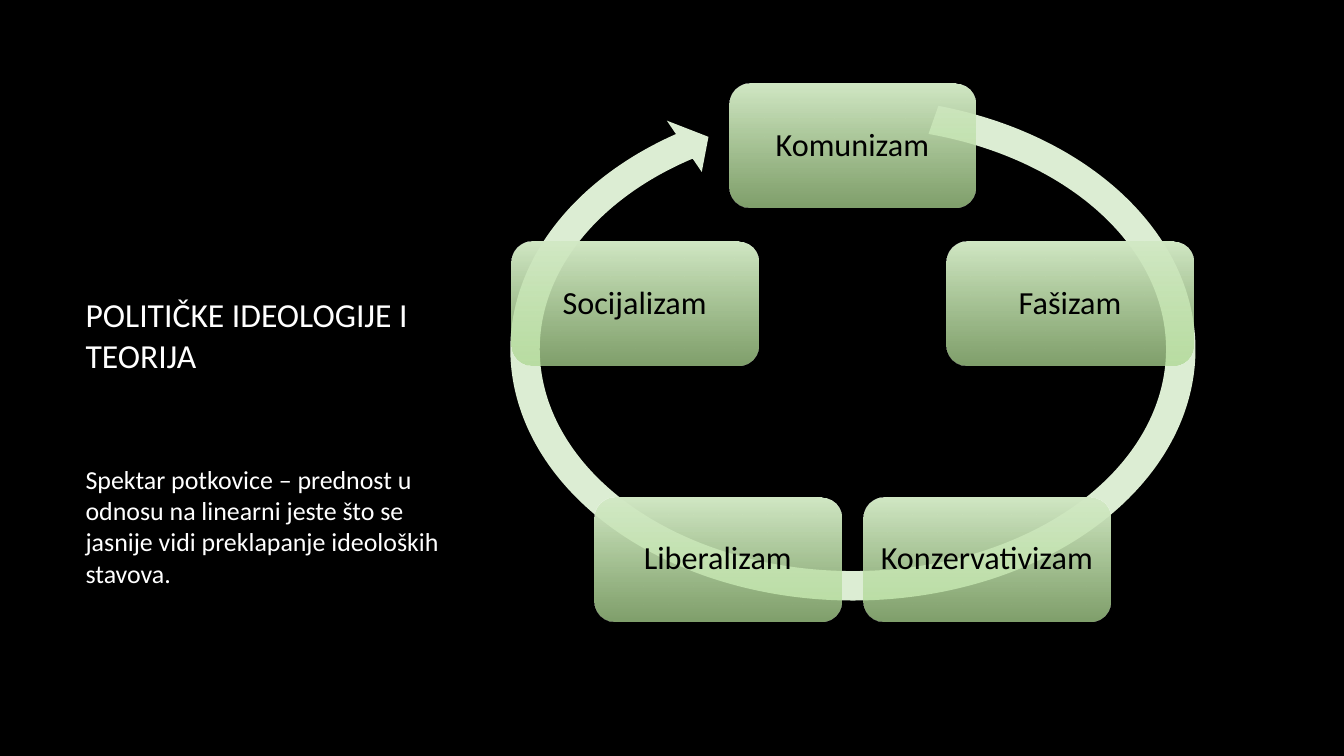
from dataclasses import dataclass
from math import cos, pi, sin

from lxml.etree import SubElement
from pptx import Presentation
from pptx.dml.color import RGBColor
from pptx.enum.shapes import MSO_SHAPE
from pptx.enum.text import MSO_ANCHOR, PP_ALIGN
from pptx.oxml.ns import qn
from pptx.util import Inches, Pt


@dataclass(frozen=True)
class Theme:
    font: str = "Calibri"
    background: str = "000000"
    light_text: str = "FFFFFF"
    dark_text: str = "000000"
    arrow: str = "DCEDD3"
    node_top: str = "D2E9C5"
    node_bottom: str = "AED893"
    node_bottom_alpha: int = 74
    title_size: float = 24
    body_size: float = 18.5
    node_size: float = 23


def write_text(frame, text, *, font, size, color, align=PP_ALIGN.LEFT,
               anchor=MSO_ANCHOR.TOP, wrap=True, spacing=1.0):
    frame.word_wrap = wrap
    frame.vertical_anchor = anchor
    para = frame.paragraphs[0]
    para.alignment = align
    para.line_spacing = spacing
    span = para.add_run()
    span.text = text
    span.font.name = font
    span.font.size = Pt(size)
    span.font.color.rgb = RGBColor.from_string(color)


class SlideBuilder:
    def __init__(self, deck, theme):
        self.deck = deck
        self.theme = theme
        self.page = deck.slides.add_slide(deck.slide_layouts[6])
        backdrop = self.page.background.fill
        backdrop.solid()
        backdrop.fore_color.rgb = RGBColor.from_string(theme.background)

    def place(self, left, top, width, height):
        across = self.deck.slide_width / 100
        down = self.deck.slide_height / 100
        return (round(left * across), round(top * down),
                round(width * across), round(height * down))

    def text(self, area, text, size, anchor):
        box = self.page.shapes.add_textbox(*self.place(*area))
        write_text(box.text_frame, text, font=self.theme.font, size=size,
                   color=self.theme.light_text, anchor=anchor)

    def shape(self, preset, area):
        shape = self.page.shapes.add_shape(preset, *self.place(*area))
        shape.shadow.inherit = False
        shape.line.fill.background()
        return shape

    def cycle_arrow(self, area, adjustments):
        arrow = self.shape(MSO_SHAPE.CIRCULAR_ARROW, area)
        for index, value in enumerate(adjustments):
            arrow.adjustments[index] = value
        arrow.fill.solid()
        arrow.fill.fore_color.rgb = RGBColor.from_string(self.theme.arrow)

    def node(self, area, label):
        theme = self.theme
        node = self.shape(MSO_SHAPE.ROUNDED_RECTANGLE, area)
        node.fill.gradient()
        node.fill.gradient_angle = 270
        stops = node.fill.gradient_stops
        for stop, color, position in zip(stops, (theme.node_top, theme.node_bottom), (0, 1)):
            stop.color.rgb = RGBColor.from_string(color)
            stop.position = position
        bottom_color = node._element.spPr.findall(".//" + qn("a:srgbClr"))[-1]
        SubElement(bottom_color, qn("a:alpha"), val=str(theme.node_bottom_alpha * 1000))
        write_text(node.text_frame, label, font=theme.font, size=theme.node_size,
                   color=theme.dark_text, align=PP_ALIGN.CENTER,
                   anchor=MSO_ANCHOR.MIDDLE, wrap=False, spacing=0.9)

    def ring(self, labels, center, radius, size):
        for index, label in enumerate(labels):
            angle = 2 * pi * index / len(labels)
            left = center[0] + radius[0] * sin(angle) - size[0] / 2
            top = center[1] - radius[1] * cos(angle) - size[1] / 2
            self.node((left, top, *size), label)


def main():
    deck = Presentation()
    deck.slide_width = Inches(13.33)
    deck.slide_height = Inches(7.5)
    theme = Theme()
    slide = SlideBuilder(deck, theme)
    slide.text((5.63, 30.27, 30.23, 20), "POLITIČKE IDEOLOGIJE I TEORIJA",
               theme.title_size, MSO_ANCHOR.BOTTOM)
    slide.cycle_arrow((36.76, 10.8, 53.41, 70.8),
                      (0.055, 3.307, 138.168, 173.611, 0.058))
    slide.ring(("Komunizam", "Fašizam", "Konzervativizam", "Liberalizam", "Socijalizam"),
               center=(63.43, 49.53), radius=(17.03, 30.27), size=(18.34, 16.32))
    slide.text((5.63, 60.7, 30.23, 16.2),
               "Spektar potkovice – prednost u odnosu na linearni jeste što se "
               "jasnije vidi preklapanje ideoloških stavova.",
               theme.body_size, MSO_ANCHOR.TOP)
    deck.save("out.pptx")


if __name__ == "__main__":
    main()
